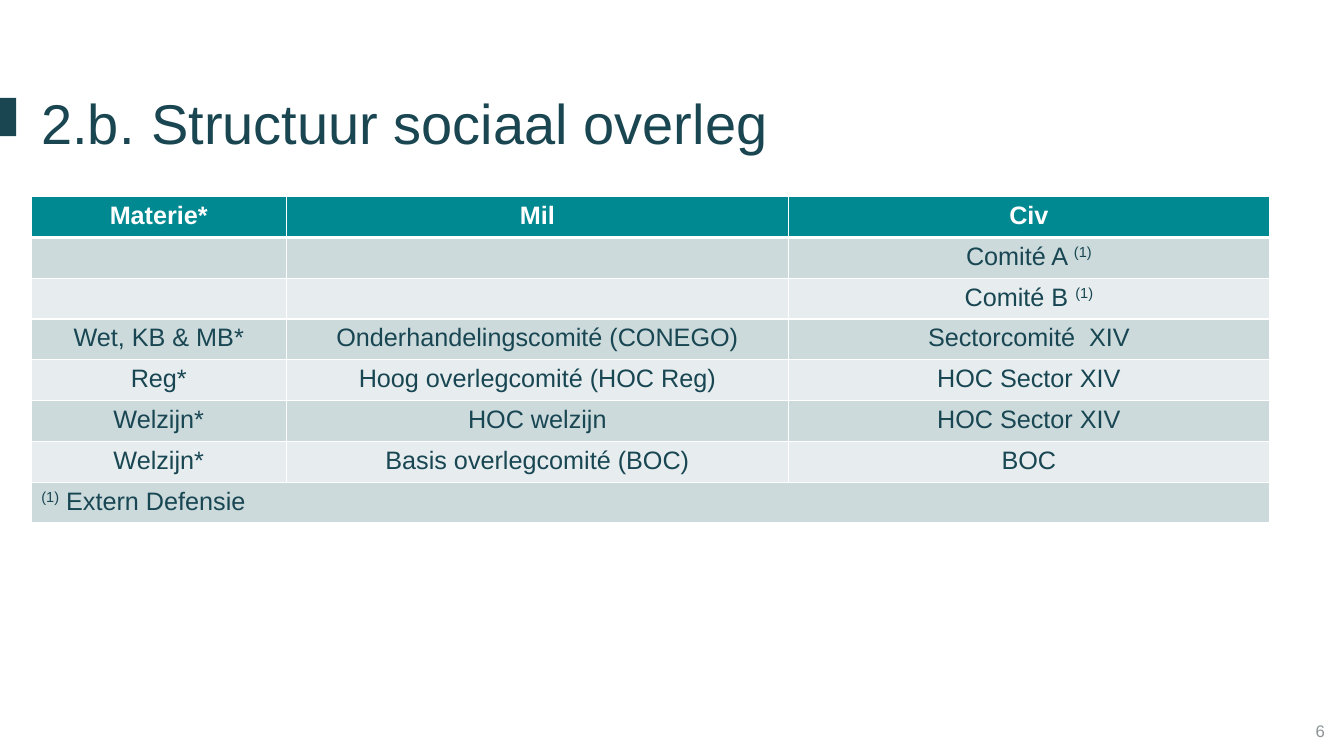
from lxml.etree import SubElement
from pptx import Presentation
from pptx.dml.color import RGBColor
from pptx.enum.shapes import MSO_SHAPE
from pptx.enum.text import MSO_ANCHOR, MSO_AUTO_SIZE, PP_ALIGN
from pptx.oxml import parse_xml
from pptx.oxml.ns import nsdecls, qn
from pptx.util import Inches, Pt

WHITE = RGBColor(0xFF, 0xFF, 0xFF)
DARK = RGBColor(0x1A, 0x46, 0x52)
BODY = RGBColor(0x18, 0x46, 0x52)
GREY = RGBColor(0x8C, 0x94, 0x98)
TEAL = RGBColor(0x00, 0x89, 0x91)
BANDS = (RGBColor(0xCC, 0xDA, 0xDC), RGBColor(0xE7, 0xED, 0xEE))

NOTE = "(1)"
ROWS = [
    ("Materie*", "Mil", "Civ"),
    ("", "", "Comité A (1)"),
    ("", "", "Comité B (1)"),
    ("Wet, KB & MB*", "Onderhandelingscomité (CONEGO)", "Sectorcomité  XIV"),
    ("Reg*", "Hoog overlegcomité (HOC Reg)", "HOC Sector XIV"),
    ("Welzijn*", "HOC welzijn", "HOC Sector XIV"),
    ("Welzijn*", "Basis overlegcomité (BOC)", "BOC"),
    ("(1) Extern Defensie", "", ""),
]
COL_WIDTHS = (2.53, 4.98, 4.77)
ROW_HEIGHT = 0.405


class SlideBuilder:
    def __init__(self, slide, font="Arial"):
        self.slide = slide
        self.font = font

    def style(self, p, size, color, align=PP_ALIGN.LEFT, bold=False):
        p.alignment = align
        f = p.font
        f.name, f.size, f.bold = self.font, Pt(size), bold
        f.color.rgb = color

    def bar(self, x, y, w, h, color):
        sp = self.slide.shapes.add_shape(
            MSO_SHAPE.RECTANGLE, Inches(x), Inches(y), Inches(w), Inches(h))
        sp.shadow.inherit = False
        sp.fill.solid()
        sp.fill.fore_color.rgb = color
        sp.line.fill.background()

    def title(self, text, x, y, w, h, hang):
        sp = self.slide.shapes.title
        sp.left, sp.top, sp.width, sp.height = map(Inches, (x, y, w, h))
        tf = sp.text_frame
        tf.text = text
        tf.word_wrap = True
        tf.auto_size = MSO_AUTO_SIZE.NONE
        tf.vertical_anchor = MSO_ANCHOR.BOTTOM
        p = tf.paragraphs[0]
        pPr = p._p.get_or_add_pPr()
        pPr.set("marL", str(Inches(hang)))
        pPr.set("indent", str(-Inches(hang)))
        self.style(p, 40, DARK)

    def page_number(self, text, x, y, w, h):
        sp = self.slide.shapes.add_textbox(
            Inches(x), Inches(y), Inches(w), Inches(h))
        tf = sp.text_frame
        tf.word_wrap = True
        tf.vertical_anchor = MSO_ANCHOR.MIDDLE
        tf.text = text
        self.style(tf.paragraphs[0], 12, GREY, PP_ALIGN.RIGHT)

    def cell_text(self, cell, text, color, align, bold):
        """Write the text with every note mark raised."""
        p = cell.text_frame.paragraphs[0]
        self.style(p, 18, color, align, bold)
        before, mark, after = text.partition(NOTE)
        for part in filter(None, (before, mark, after)):
            r = p.add_run()
            r.text = part
            if part == NOTE:
                r._r.get_or_add_rPr().set("baseline", "30000")

    def borders(self, cell, top=1, bottom=1):
        tcPr = cell._tc.get_or_add_tcPr()
        widths = {"lnL": 1, "lnR": 1, "lnT": top, "lnB": bottom}
        for i, (tag, width) in enumerate(widths.items()):
            ln = parse_xml(f'<a:{tag} {nsdecls("a")} w="{Pt(width)}"/>')
            fill = SubElement(ln, qn("a:solidFill"))
            SubElement(fill, qn("a:srgbClr"), val=str(WHITE))
            tcPr.insert(i, ln)

    def table(self, rows, x, y, widths, row_height):
        """Add a table with a header row and a last row merged for the note."""
        n = len(rows)
        table = self.slide.shapes.add_table(
            n, len(widths), Inches(x), Inches(y),
            Inches(sum(widths)), Inches(n * row_height)).table
        table.horz_banding = False
        for col, width in zip(table.columns, widths):
            col.width = Inches(width)
        for i, texts in enumerate(rows):
            table.rows[i].height = Inches(row_height)
            header = i == 0
            align = PP_ALIGN.LEFT if i == n - 1 else PP_ALIGN.CENTER
            for cell, text in zip(table.rows[i].cells, texts):
                cell.fill.solid()
                cell.fill.fore_color.rgb = TEAL if header else BANDS[(i - 1) % 2]
                self.cell_text(cell, text, WHITE if header else BODY, align, header)
                self.borders(cell, 3 if i == 1 else 1, 3 if header else 1)
        table.cell(n - 1, 0).merge(table.cell(n - 1, len(widths) - 1))


def main():
    prs = Presentation()
    prs.slide_width, prs.slide_height = Inches(13.33), Inches(7.5)
    s = SlideBuilder(prs.slides.add_slide(prs.slide_layouts[5]))
    s.bar(0, 0.97, 0.16, 0.38, DARK)
    s.page_number("6", 10.24, 7.05, 3, 0.4)
    s.title("2.b.\tStructuur sociaal overleg", 0.31, 0.82, 12.35, 0.77, 0.59)
    s.table(ROWS, 0.31, 1.95, COL_WIDTHS, ROW_HEIGHT)
    prs.save("out.pptx")


if __name__ == "__main__":
    main()
